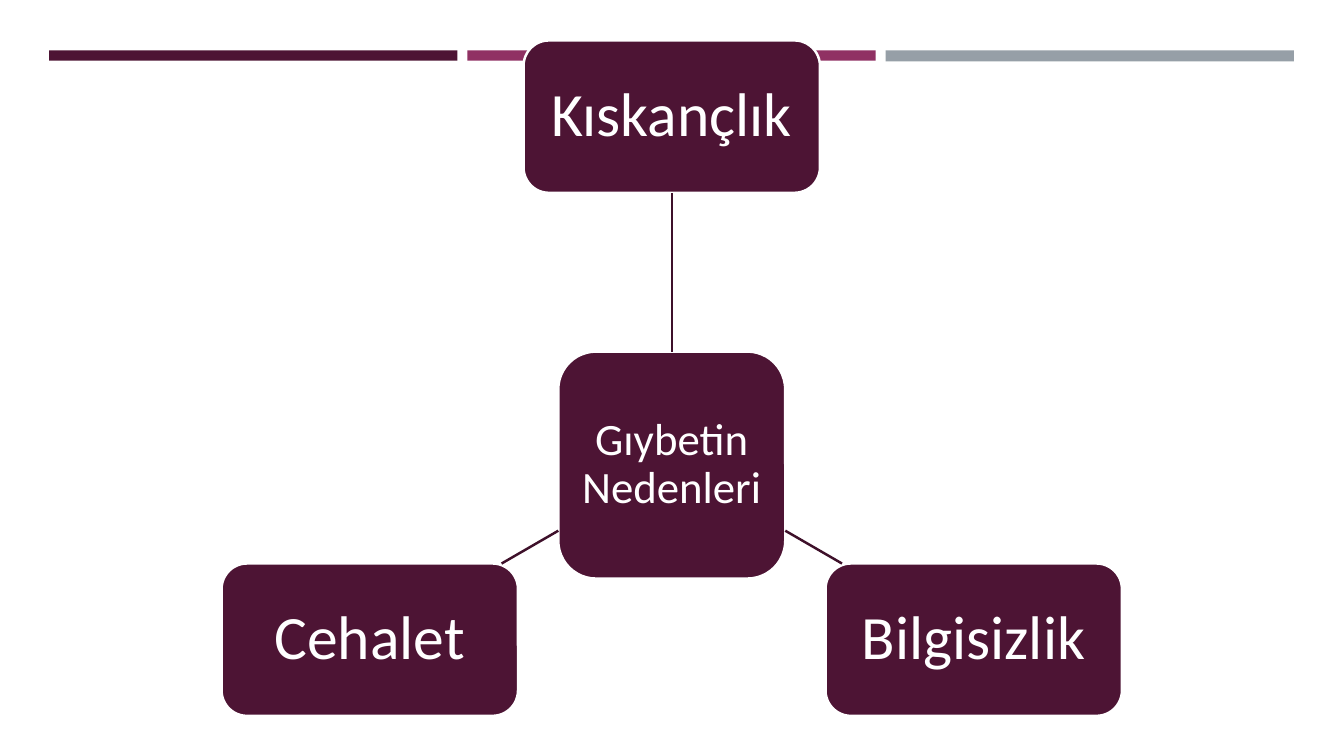
from lxml.etree import SubElement
from pptx import Presentation
from pptx.dml.color import RGBColor as Rgb
from pptx.enum.shapes import MSO_CONNECTOR as Link, MSO_SHAPE as Kind
from pptx.enum.text import MSO_ANCHOR as Anchor, PP_ALIGN as Align
from pptx.oxml.ns import qn
from pptx.util import Cm, Pt

HUB = "Gıybetin Nedenleri"
LEAVES = [("Kıskançlık", 0, 2.94), ("Bilgisizlik", 1, 16.12), ("Cehalet", -1, 16.12)]
BARS = [("plum", 0, 0.26), ("gray", 2, 0.28), ("rose", 1, 0.26)]
COLORS = {"plum": "4D1434", "rose": "903163", "gray": "969FA7",
          "line": "3E102A", "white": "FFFFFF"}

MID_X, MID_Y = 16.93, 11.72
HUB_SIDE = 5.72
LEAF_W, LEAF_H = 7.47, 3.84
SPREAD = 7.61
BAR_X, BAR_Y, BAR_W, BAR_STEP = 1.24, 1.27, 10.29, 10.54


def color(name):
    return Rgb.from_string(COLORS[name])


def add_bar(slide, name, col, high):
    bar = slide.shapes.add_shape(Kind.RECTANGLE, Cm(BAR_X + col * BAR_STEP),
                                 Cm(BAR_Y), Cm(BAR_W), Cm(high))
    bar.shadow.inherit = False
    bar.fill.solid()
    bar.fill.fore_color.rgb = color(name)
    bar.line.fill.background()


def add_node(slide, text, x, y, wide, high, size, inset):
    node = slide.shapes.add_shape(Kind.ROUNDED_RECTANGLE, Cm(x - wide / 2),
                                  Cm(y - high / 2), Cm(wide), Cm(high))
    node.shadow.inherit = False
    node.fill.solid()
    node.fill.fore_color.rgb = color("plum")
    node.line.color.rgb = color("white")
    node.line.width = Pt(1.75)
    frame = node.text_frame
    frame.word_wrap = True
    frame.vertical_anchor = Anchor.MIDDLE
    frame.margin_left = frame.margin_right = Cm(inset)
    frame.margin_top = frame.margin_bottom = Cm(inset)
    para = frame.paragraphs[0]
    para.text = text
    para.alignment = Align.CENTER
    para.line_spacing = 0.9
    para.font.size = Pt(size)
    para.font.name = "Calibri"
    para.font.color.rgb = color("white")
    return node


def add_link(slide, hub, leaf, side, y):
    run, rise = side * SPREAD, y - MID_Y
    if side:
        near = HUB_SIDE / 2 / SPREAD
        far = (rise - LEAF_H / 2) / rise
    else:
        near = HUB_SIDE / 2 / -rise
        far = (rise + LEAF_H / 2) / rise
    ends = [Cm(base + part * step) for part in (near, far)
            for base, step in ((MID_X, run), (MID_Y, rise))]
    link = slide.shapes.add_connector(Link.STRAIGHT, *ends)
    link.line.color.rgb = color("line")
    link.line.width = Pt(1.75)
    SubElement(link._element.spPr, qn("a:effectLst"))
    if not side:
        link.begin_connect(hub, 0)
        link.end_connect(leaf, 2)


def main():
    deck = Presentation()
    deck.slide_width, deck.slide_height = Cm(33.87), Cm(19.05)
    slide = deck.slides.add_slide(deck.slide_layouts[6])
    for bar in BARS:
        add_bar(slide, *bar)
    hub = add_node(slide, HUB, MID_X, MID_Y, HUB_SIDE, HUB_SIDE, 32, 0.23)
    for text, side, y in LEAVES:
        leaf = add_node(slide, text, MID_X + side * SPREAD, y, LEAF_W, LEAF_H, 44, 0.3)
        add_link(slide, hub, leaf, side, y)
    deck.save("out.pptx")


if __name__ == "__main__":
    main()
